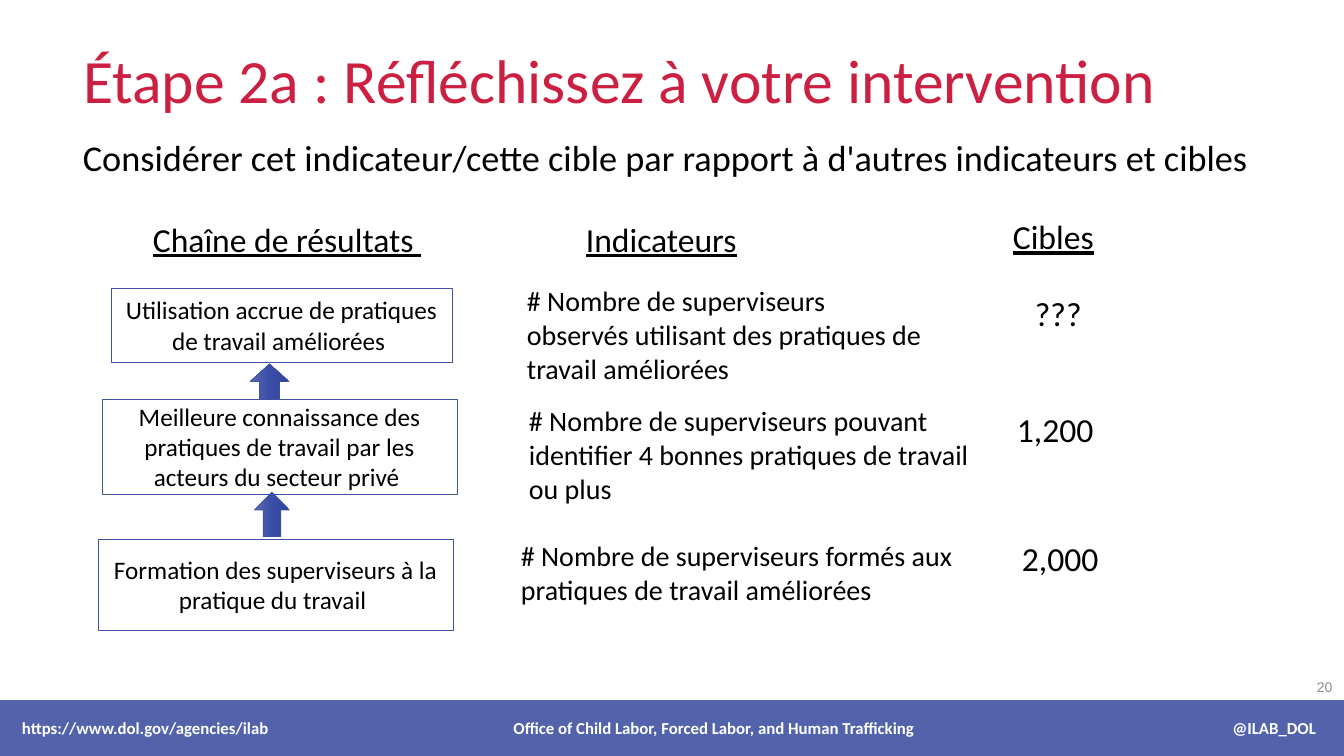
"""Build the slide that sets a results chain beside its indicators and targets."""
from copy import deepcopy
from dataclasses import dataclass

from pptx import Presentation, util as u
from pptx.dml.color import RGBColor
from pptx.enum import shapes, text
from pptx.oxml.ns import qn


@dataclass(frozen=True)
class Theme:
    font: str = "Calibri"
    number_font: str = "Arial"
    red: str = "CB2042"
    blue: str = "3F51A2"
    footer: str = "5262AB"
    gray: str = "8C8C8C"
    black: str = "000000"
    white: str = "FFFFFF"
    gradient: tuple = ("5D68AE", "3A4EA7", "2F4299")
    title: float = 44
    subtitle: float = 25.9
    heading: float = 24
    indicator: float = 20
    step: float = 18
    note: float = 12
    number: float = 10


theme = Theme()
ALIGN = text.PP_ALIGN
ANCHOR = text.MSO_ANCHOR


def px(length):
    return u.Emu(round(length * 914400 / 100.8))


def write(box, words, size, color=theme.black, font=theme.font, align=ALIGN.LEFT,
          anchor=ANCHOR.TOP, bold=False, underline=False, wrap=True, spacing=None):
    frame = box.text_frame
    frame.auto_size = text.MSO_AUTO_SIZE.NONE
    frame.word_wrap = wrap
    frame.vertical_anchor = anchor
    para = frame.paragraphs[0]
    para.alignment = align
    para.line_spacing = spacing
    span = para.add_run()
    span.text = words
    span.font.name = font
    span.font.size = u.Pt(size)
    span.font.bold = bold
    span.font.underline = underline
    span.font.color.rgb = RGBColor.from_string(color)


deck = Presentation()
deck.slide_width, deck.slide_height = px(1344), px(756)
page = deck.slides.add_slide(deck.slide_layouts[5])

title = page.shapes.title
title.left, title.top, title.width, title.height = map(px, (73, 16, 1105, 106))
write(title, "Étape 2a : Réfléchissez à votre intervention", theme.title,
      color=theme.red, anchor=ANCHOR.BOTTOM, spacing=0.9)

subtitle = page.shapes.add_textbox(*map(px, (73, 135, 1218, 70)))
write(subtitle, "Considérer cet indicateur/cette cible par rapport à d'autres indicateurs et cibles",
      theme.subtitle, spacing=0.9)

headings = [
    ("Chaîne de résultats ", (143, 214, 291, 50)),
    ("Indicateurs", (576, 214, 172, 50)),
    ("Cibles", (1003, 211, 102, 50)),
]
for words, area in headings:
    heading = page.shapes.add_textbox(*map(px, area))
    write(heading, words, theme.heading, underline=True, wrap=False)

steps = [
    ("Utilisation accrue de pratiques de travail améliorées ", (111, 288, 341, 74)),
    ("Meilleure connaissance des pratiques de travail par les acteurs du secteur privé ",
     (102, 399, 355, 95)),
    ("Formation des superviseurs à la pratique du travail ", (98, 539, 355, 91)),
]
for words, area in steps:
    step = page.shapes.add_shape(shapes.MSO_SHAPE.RECTANGLE, *map(px, area))
    step.shadow.inherit = False
    step.fill.solid()
    step.fill.fore_color.rgb = RGBColor.from_string(theme.white)
    step.line.color.rgb = RGBColor.from_string(theme.blue)
    step.line.width = u.Pt(0.5)
    write(step, words, theme.step, align=ALIGN.CENTER, anchor=ANCHOR.MIDDLE)

for area in [(250, 497, 44, 35), (252, 362, 35, 39)]:
    arrow = page.shapes.add_shape(shapes.MSO_SHAPE.RIGHT_ARROW, *map(px, area))
    arrow.rotation = 270
    arrow.shadow.inherit = False
    arrow.line.color.rgb = RGBColor.from_string(theme.blue)
    arrow.line.width = u.Pt(0.5)
    arrow.fill.gradient()
    arrow.fill.gradient_angle = 270
    stops = arrow.element.spPr.find(qn("a:gradFill")).find(qn("a:gsLst"))
    stops.insert(1, deepcopy(stops[0]))
    for index, stop in enumerate(arrow.fill.gradient_stops):
        stop.position = index / 2
        stop.color.rgb = RGBColor.from_string(theme.gradient[index])

indicators = [
    ("# Nombre de superviseurs observés utilisant des pratiques de travail améliorées",
     (517, 279, 422, 112)),
    ("# Nombre de superviseurs pouvant identifier 4 bonnes pratiques de travail ou plus",
     (519, 399, 464, 112)),
    ("# Nombre de superviseurs formés aux pratiques de travail améliorées",
     (511, 534, 471, 78)),
]
for words, area in indicators:
    indicator = page.shapes.add_textbox(*map(px, area))
    write(indicator, words, theme.indicator)

targets = [
    ("???", (1025, 288, 98, 50)),
    ("1,200", (1007, 404, 188, 50)),
    ("2,000", (1012, 533, 185, 50)),
]
for words, area in targets:
    target = page.shapes.add_textbox(*map(px, area))
    write(target, words, theme.heading)

number = page.shapes.add_textbox(*map(px, (1307, 667, 49, 40)))
write(number, "20", theme.number, color=theme.gray, font=theme.number_font,
      anchor=ANCHOR.MIDDLE)

bar = page.shapes.add_shape(shapes.MSO_SHAPE.RECTANGLE, *map(px, (0, 700, 1344, 56)))
bar.shadow.inherit = False
bar.fill.solid()
bar.fill.fore_color.rgb = RGBColor.from_string(theme.footer)
bar.line.fill.background()

notes = [
    ("https://www.dol.gov/agencies/ilab", (12, 700, 400, 56), ALIGN.LEFT),
    ("Office of Child Labor, Forced Labor, and Human Trafficking",
     (464, 700, 500, 56), ALIGN.CENTER),
    ("@ILAB_DOL", (1126, 700, 200, 56), ALIGN.RIGHT),
]
for words, area, align in notes:
    note = page.shapes.add_textbox(*map(px, area))
    write(note, words, theme.note, color=theme.white, align=align,
          anchor=ANCHOR.MIDDLE, bold=True)

deck.save("out.pptx")
